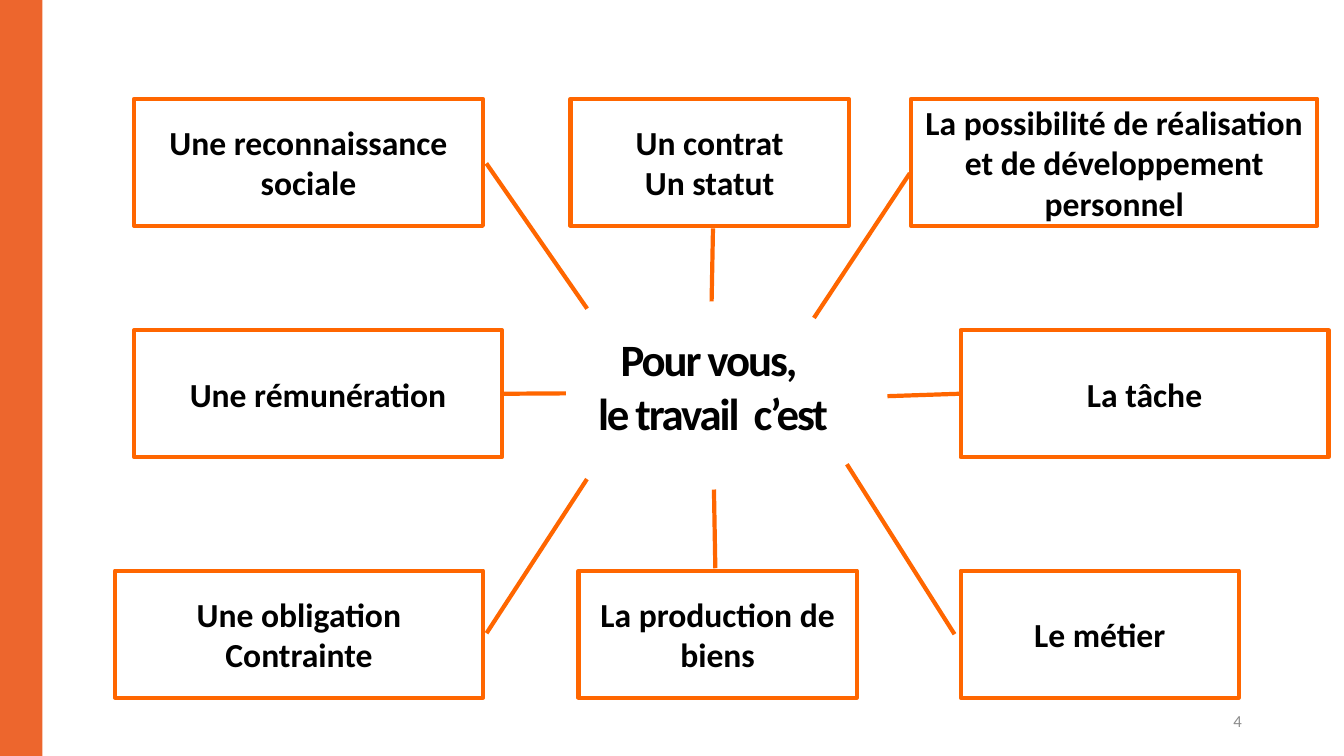
from pptx import Presentation
from pptx.dml.color import RGBColor
from pptx.enum import shapes, text
from pptx.util import Cm, Pt

COLOURS = {"band": "ED662D", "border": "FF6600", "paper": "FFFFFF",
           "ink": "000000", "number": "8C8C8C"}
FONT = "Calibri"
SLIDE_WIDTH, SLIDE_HEIGHT = 33.87, 19.05
IDEA_HEIGHT = 3.2
TOP_ROW, MIDDLE_ROW, BOTTOM_ROW = 2.49, 8.32, 14.38

# Each idea: wording, left, top, width, pointer (start y, start x, end y, end x)
IDEAS = [
    ("Une reconnaissance\nsociale", 3.38, TOP_ROW, 8.79, (0.509, 1.01, 1.653, 1.299)),
    ("Un contrat\nUn statut", 14.38, TOP_ROW, 7.01, (1.02, 0.512, 1.595, 0.507)),
    ("La possibilité de réalisation et de développement personnel",
     22.96, TOP_ROW, 10.24, (0.586, -0.003, 1.726, -0.239)),
    ("Une rémunération", 3.38, MIDDLE_ROW, 9.27, (0.501, 1.001, 0.498, 1.174)),
    ("La tâche", 24.21, MIDDLE_ROW, 9.27, (0.501, -0.003, 0.52, -0.199)),
    ("Le métier", 24.21, BOTTOM_ROW, 7.01, (0.501, -0.022, -0.838, -0.409)),
    ("Une obligation\nContrainte", 2.9, BOTTOM_ROW, 9.27, (0.493, 1.01, -0.721, 1.283)),
    ("La production de biens", 14.58, BOTTOM_ROW, 7.01, (-0.019, 0.492, -0.639, 0.487)),
]


def colour(name):
    """Return the named colour of the palette."""
    return RGBColor.from_string(COLOURS[name])


def write(frame, wording, size, ink="ink", bold=True,
          align=text.PP_ALIGN.CENTER, anchor=text.MSO_ANCHOR.MIDDLE):
    """Fill a text frame and format all its runs."""
    frame.text = wording
    frame.word_wrap = True
    frame.vertical_anchor = anchor
    for paragraph in frame.paragraphs:
        paragraph.alignment = align
        for run in paragraph.runs:
            run.font.name = FONT
            run.font.size = Pt(size)
            run.font.bold = bold
            run.font.color.rgb = colour(ink)


def add_band(slide, left, top, width, height):
    """Draw the coloured band along the slide edge."""
    band = slide.shapes.add_shape(shapes.MSO_SHAPE.RECTANGLE,
                                  Cm(left), Cm(top), Cm(width), Cm(height))
    band.shadow.inherit = False
    band.fill.solid()
    band.fill.fore_color.rgb = colour("band")
    band.line.fill.background()


def add_idea(slide, wording, left, top, width, pointer):
    """Draw one idea as a callout pointing at the central question."""
    idea = slide.shapes.add_shape(shapes.MSO_SHAPE.LINE_CALLOUT_1,
                                  Cm(left), Cm(top), Cm(width), Cm(IDEA_HEIGHT))
    for index, fraction in enumerate(pointer):
        idea.adjustments[index] = fraction
    idea.shadow.inherit = False
    idea.fill.solid()
    idea.fill.fore_color.rgb = colour("paper")
    idea.line.color.rgb = colour("border")
    idea.line.width = Pt(3)
    write(idea.text_frame, wording, 24)


def place_question(slide, left, top, width, height):
    """Put the title in the centre as the question all ideas answer."""
    question = slide.shapes.title
    question.left, question.top = Cm(left), Cm(top)
    question.width, question.height = Cm(width), Cm(height)
    write(question.text_frame, "Pour vous, \vle travail  c’est", 32,
          anchor=text.MSO_ANCHOR.TOP)
    question.text_frame.auto_size = text.MSO_AUTO_SIZE.SHAPE_TO_FIT_TEXT
    for run in question.text_frame.paragraphs[0].runs:
        run.font._element.set("spc", "-150")


def add_page_number(slide, left, top, width, height):
    """Write the page number at the lower right."""
    number = slide.shapes.add_textbox(Cm(left), Cm(top), Cm(width), Cm(height))
    write(number.text_frame, "4", 12, "number", False, text.PP_ALIGN.RIGHT)


def main():
    """Build and save the slide."""
    deck = Presentation()
    deck.slide_width, deck.slide_height = Cm(SLIDE_WIDTH), Cm(SLIDE_HEIGHT)
    slide = deck.slides.add_slide(deck.slide_layouts[5])
    add_band(slide, 0, 0, 1.07, SLIDE_HEIGHT)
    for idea in IDEAS:
        add_idea(slide, *idea)
    place_question(slide, 13.97, 8.23, 8, 3)
    add_page_number(slide, 23.93, 17.65, 7.62, 1.02)
    deck.save("out.pptx")


if __name__ == "__main__":
    main()
